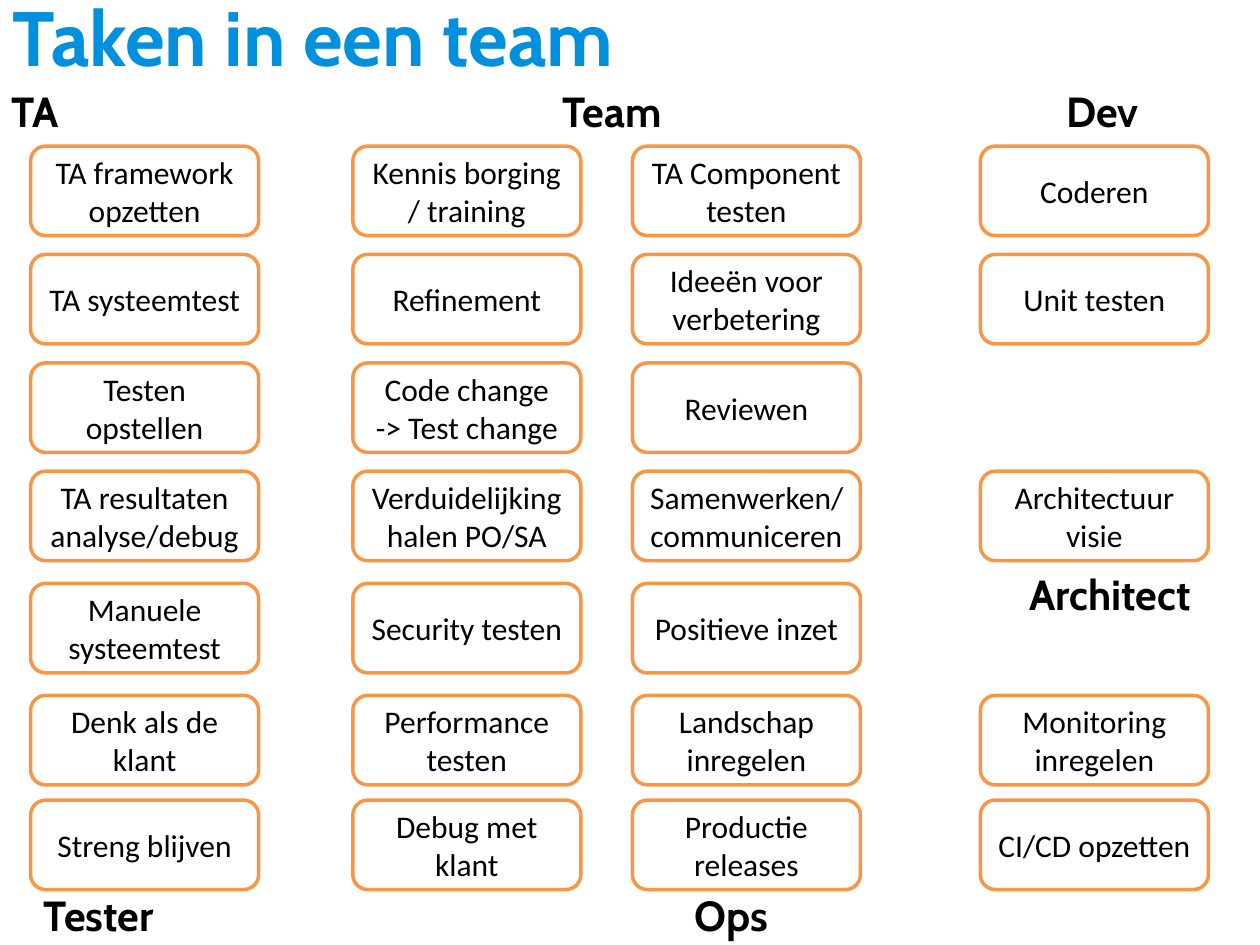
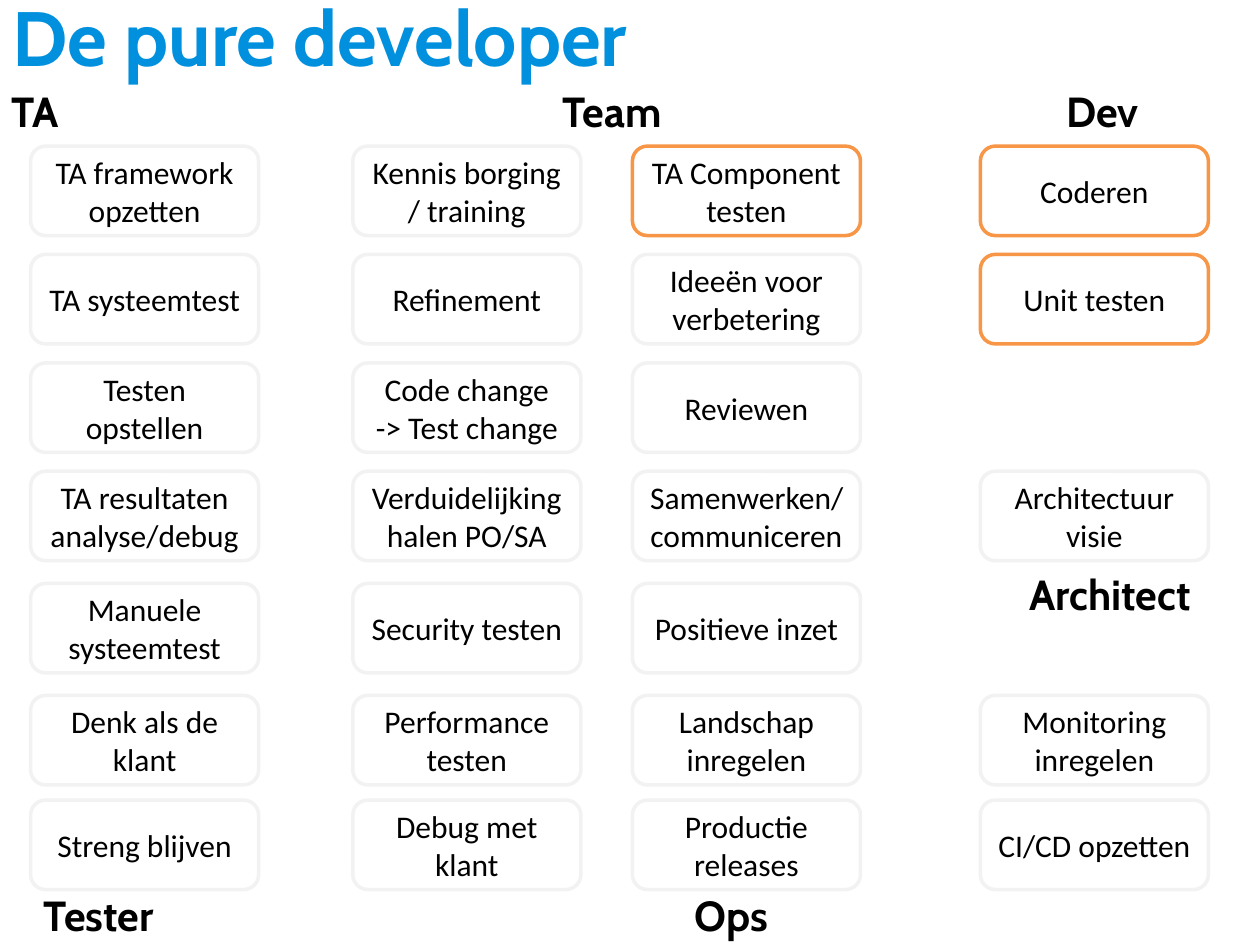
from dataclasses import dataclass

from pptx import Presentation
from pptx.dml.color import RGBColor
from pptx.enum.shapes import MSO_SHAPE as Preset
from pptx.enum.text import MSO_ANCHOR as Anchor, MSO_AUTO_SIZE as AutoSize, PP_ALIGN as Align
from pptx.oxml.xmlchemy import OxmlElement
from pptx.slide import Slide
from pptx.text.text import TextFrame
from pptx.util import Pt

COLORS = {
    "title": "0090DE",
    "text": "000000",
    "card": "FFFFFF",
    "active": "F79646",
    "inactive": "F2F2F2",
}
HEADING_FONT = "Cabin"
CARD_FONT = "Calibri"
TITLE_ONLY = 5
CARD_WIDTH, CARD_HEIGHT = 130.3, 51.1
ROW_TOPS = (83.5, 145.4, 207.4, 269.3, 333.4, 397.4, 457.2)


@dataclass(frozen=True)
class TaskColumn:
    left: float
    tasks: tuple[str | None, ...]


@dataclass(frozen=True)
class RoleLabels:
    text: str
    left: float
    top: float
    width: float
    tab_stops: tuple[float, ...] = ()


@dataclass(frozen=True)
class TeamSlide:
    title: str
    active_tasks: frozenset[str]


TASK_COLUMNS = (
    TaskColumn(17.5, (
        "TA framework opzetten", "TA systeemtest", "Testen opstellen",
        "TA resultaten analyse/debug", "Manuele systeemtest",
        "Denk als de klant", "Streng blijven",
    )),
    TaskColumn(201.6, (
        "Kennis borging / training", "Refinement", "Code change\v-> Test change",
        "Verduidelijking halen PO/SA", "Security testen",
        "Performance testen", "Debug met klant",
    )),
    TaskColumn(361.4, (
        "TA Component testen", "Ideeën voor verbetering", "Reviewen",
        "Samenwerken/communiceren", "Positieve inzet",
        "Landschap inregelen", "Productie releases",
    )),
    TaskColumn(560.2, (
        "Coderen", "Unit testen", None, "Architectuur visie", None,
        "Monitoring inregelen", "CI/CD opzetten",
    )),
)
ROLE_LABELS = (
    RoleLabels("TA\tTeam\tDev", -0.7, 43.2, 707, (315, 603)),
    RoleLabels("Tester\tOps", 18, 502.6, 707, (372,)),
    RoleLabels("Architect", 581, 319.7, 131.8),
)
ALL_TASKS = frozenset(task for column in TASK_COLUMNS for task in column.tasks if task)
TEAM_SLIDES = (
    TeamSlide("Taken in een team", ALL_TASKS),
    TeamSlide("De pure developer", frozenset({"TA Component testen", "Coderen", "Unit testen"})),
)


def rgb(name: str) -> RGBColor:
    return RGBColor.from_string(COLORS[name])


def write_text(frame: TextFrame, text: str, font_name: str, size: float,
               color: str = "text", bold: bool = False, align: Align = Align.LEFT) -> None:
    frame.text = text
    frame.word_wrap = True
    frame.auto_size = AutoSize.NONE
    frame.vertical_anchor = Anchor.MIDDLE
    for paragraph in frame.paragraphs:
        paragraph.alignment = align
        for run in paragraph.runs:
            run.font.name = font_name
            run.font.size = Pt(size)
            run.font.bold = bold
            run.font.color.rgb = rgb(color)


def format_title(slide: Slide, text: str) -> None:
    title = slide.shapes.title
    title.left, title.top = Pt(0), Pt(-24.5)
    title.width, title.height = Pt(626.4), Pt(90)
    write_text(title.text_frame, text, HEADING_FONT, 44, "title", bold=True)


def add_task_card(slide: Slide, left: float, top: float, task: str, active: bool) -> None:
    shape = slide.shapes.add_shape(
        Preset.ROUNDED_RECTANGLE, Pt(left), Pt(top), Pt(CARD_WIDTH), Pt(CARD_HEIGHT))
    shape.shadow.inherit = False
    shape.fill.solid()
    shape.fill.fore_color.rgb = rgb("card")
    shape.line.color.rgb = rgb("active" if active else "inactive")
    shape.line.width = Pt(2)
    write_text(shape.text_frame, task, CARD_FONT, 18, align=Align.CENTER)


def add_role_labels(slide: Slide, labels: RoleLabels) -> None:
    box = slide.shapes.add_textbox(Pt(labels.left), Pt(labels.top), Pt(labels.width), Pt(39.6))
    write_text(box.text_frame, labels.text, HEADING_FONT, 24, bold=True)
    if labels.tab_stops:
        tab_list = OxmlElement("a:tabLst")
        for position in labels.tab_stops:
            tab = OxmlElement("a:tab")
            tab.set("pos", str(Pt(position)))
            tab.set("algn", "l")
            tab_list.append(tab)
        box.text_frame.paragraphs[0]._p.get_or_add_pPr().append(tab_list)


def add_team_slide(presentation: Presentation, content: TeamSlide) -> None:
    slide = presentation.slides.add_slide(presentation.slide_layouts[TITLE_ONLY])
    format_title(slide, content.title)
    for column in TASK_COLUMNS:
        for top, task in zip(ROW_TOPS, column.tasks):
            if task:
                add_task_card(slide, column.left, top, task, task in content.active_tasks)
    for labels in ROLE_LABELS:
        add_role_labels(slide, labels)


def main() -> None:
    presentation = Presentation()
    presentation.slide_width, presentation.slide_height = Pt(720), Pt(540)
    for content in TEAM_SLIDES:
        add_team_slide(presentation, content)
    presentation.save("out.pptx")


if __name__ == "__main__":
    main()
